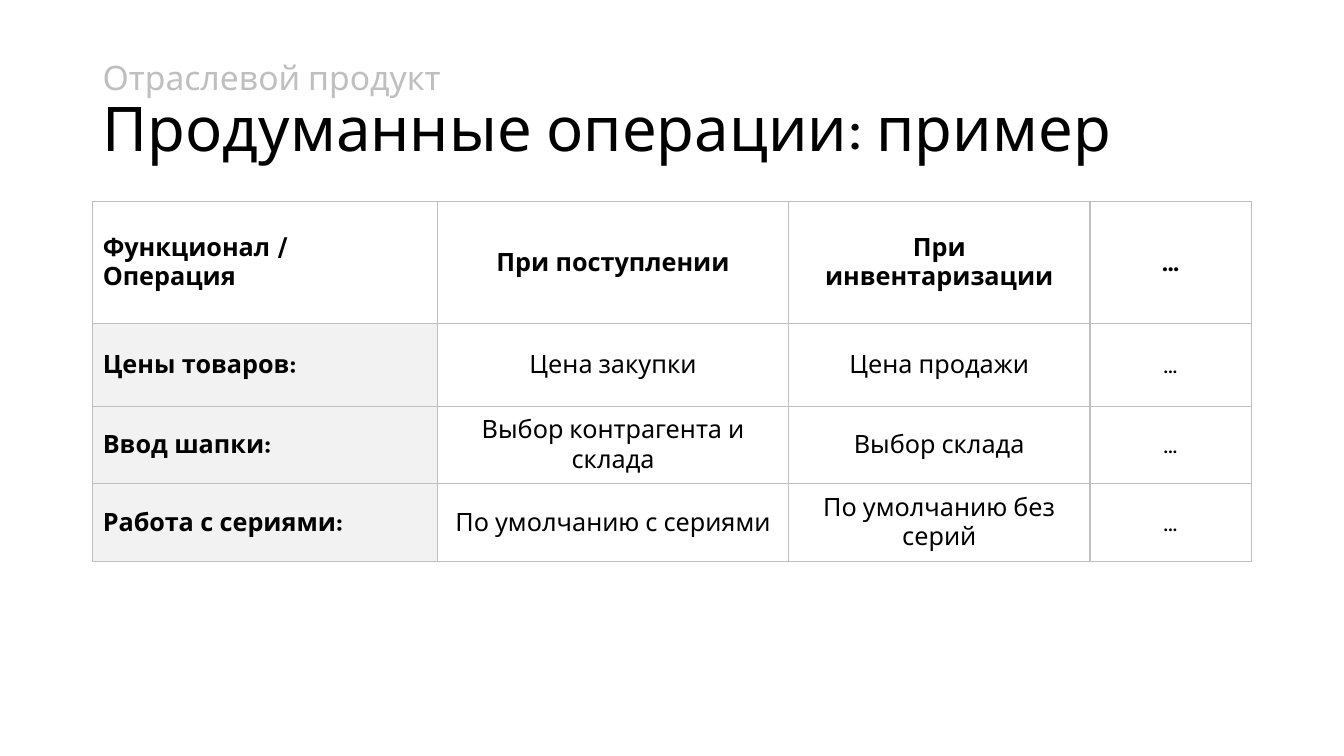
from lxml import etree
from pptx import Presentation
from pptx.dml.color import RGBColor
from pptx.enum.text import MSO_ANCHOR, PP_ALIGN
from pptx.oxml.ns import qn
from pptx.util import Inches, Pt

MIDDLE = MSO_ANCHOR.MIDDLE
LEFT, CENTER = PP_ALIGN.LEFT, PP_ALIGN.CENTER

COLORS = {"ink": "000000", "muted": "BFBFBF", "paper": "FFFFFF", "label": "F2F2F2"}

MARGIN, CONTENT_WIDTH = 6.9, 86.27  # percent of slide width
COLUMN_SHARES = [25.66, 26.11, 22.43, 12]
ROW_SHARES = [16.13, 10.93, 10.27, 10.27]  # percent of slide height

OPERATIONS = [
    ["Функционал / Операция", "При поступлении", "При инвентаризации", "…"],
    ["Цены товаров:", "Цена закупки", "Цена продажи", "…"],
    ["Ввод шапки:", "Выбор контрагента и склада", "Выбор склада", "…"],
    ["Работа с сериями:", "По умолчанию с сериями", "По умолчанию без серий", "…"],
]


class SlideBuilder:
    font = "Karla"
    cell_size = 18
    border_width = 1

    def __init__(self, deck):
        self.deck = deck
        self.slide = deck.slides.add_slide(deck.slide_layouts[6])

    def across(self, percent):
        return round(self.deck.slide_width * percent / 100)

    def down(self, percent):
        return round(self.deck.slide_height * percent / 100)

    def run(self, paragraph, text, size, color="ink", bold=False):
        run = paragraph.add_run()
        run.text = text
        run.font.name = self.font
        run.font.size = Pt(size)
        run.font.bold = bold
        run.font.color.rgb = RGBColor.from_string(COLORS[color])

    def heading(self, kicker, title, top, height):
        box = self.slide.shapes.add_textbox(
            self.across(MARGIN), self.down(top), self.across(CONTENT_WIDTH), self.down(height))
        frame = box.text_frame
        frame.word_wrap = True
        frame.vertical_anchor = MIDDLE
        paragraph = frame.paragraphs[0]
        paragraph.line_spacing = 0.9
        self.run(paragraph, kicker, 24, "muted")
        paragraph.add_line_break()
        self.run(paragraph, title, 44)

    def border(self, cell):
        properties = cell._tc.get_or_add_tcPr()
        for side in ("lnL", "lnR", "lnT", "lnB"):
            line = etree.SubElement(properties, qn(f"a:{side}"), w=str(Pt(self.border_width)))
            fill = etree.SubElement(line, qn("a:solidFill"))
            etree.SubElement(fill, qn("a:srgbClr"), val=COLORS["muted"])

    def cell(self, cell, text, is_header, is_label):
        self.border(cell)
        cell.fill.solid()
        shade = "label" if is_label and not is_header else "paper"
        cell.fill.fore_color.rgb = RGBColor.from_string(COLORS[shade])
        cell.vertical_anchor = MIDDLE
        paragraph = cell.text_frame.paragraphs[0]
        paragraph.alignment = LEFT if is_label else CENTER
        self.run(paragraph, text, self.cell_size, bold=is_header or is_label)

    def table(self, content, top):
        table = self.slide.shapes.add_table(
            len(content), len(content[0]), self.across(MARGIN), self.down(top),
            self.across(sum(COLUMN_SHARES)), self.down(sum(ROW_SHARES))).table
        for column, share in zip(table.columns, COLUMN_SHARES):
            column.width = self.across(share)
        for row, share in zip(table.rows, ROW_SHARES):
            row.height = self.down(share)
        for r, texts in enumerate(content):
            for c, text in enumerate(texts):
                self.cell(table.cell(r, c), text, r == 0, c == 0)


def main():
    deck = Presentation()
    deck.slide_width, deck.slide_height = Inches(13.33), Inches(7.5)
    builder = SlideBuilder(deck)
    builder.heading("Отраслевой продукт", "Продуманные операции: пример", top=5.33, height=19.33)
    builder.table(OPERATIONS, top=26.67)
    deck.save("out.pptx")


if __name__ == "__main__":
    main()
